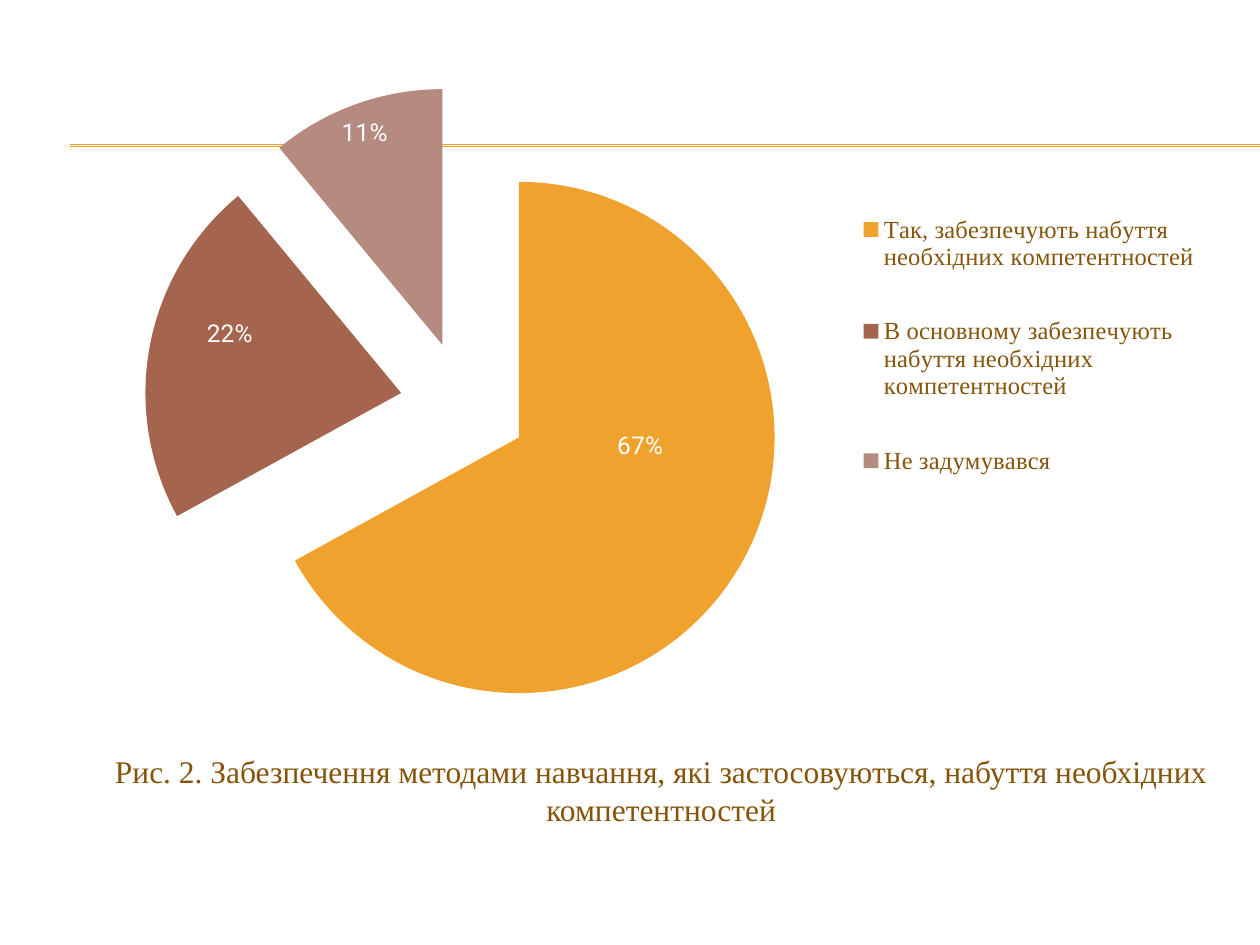
from dataclasses import dataclass

from lxml.etree import SubElement
from pptx import Presentation
from pptx.chart.data import CategoryChartData
from pptx.dml.color import RGBColor
from pptx.enum.chart import XL_CHART_TYPE as ChartType
from pptx.enum.chart import XL_LABEL_POSITION as LabelPosition
from pptx.enum.chart import XL_LEGEND_POSITION as LegendPosition
from pptx.enum.shapes import MSO_CONNECTOR as Connector
from pptx.enum.text import MSO_ANCHOR as Anchor
from pptx.enum.text import PP_ALIGN as Align
from pptx.oxml import parse_xml
from pptx.oxml.ns import nsdecls, qn
from pptx.util import Cm, Pt


@dataclass(frozen=True)
class Theme:
    accent: RGBColor = RGBColor(0xF0, 0xA2, 0x2E)
    rust: RGBColor = RGBColor(0xA5, 0x64, 0x4E)
    rose: RGBColor = RGBColor(0xB5, 0x8B, 0x80)
    text: RGBColor = RGBColor(0x85, 0x54, 0x0A)
    label: RGBColor = RGBColor(0xFF, 0xFF, 0xFF)
    serif: str = "Times New Roman"
    sans: str = "Roboto"
    title_size: Pt = Pt(18)
    chart_size: Pt = Pt(14)
    rule_width: Pt = Pt(0.75)


@dataclass(frozen=True)
class Answer:
    name: str
    share: float
    color: RGBColor
    label_shift: tuple[float, float]


THEME = Theme()
ANSWERS = [
    Answer("Так, забезпечують набуття необхідних компетентностей",
           0.67, THEME.accent, (0.01, -0.08)),
    Answer("В основному забезпечують набуття необхідних компетентностей",
           0.22, THEME.rust, (-0.04, -0.05)),
    Answer("Не задумувався", 0.11, THEME.rose, (-0.03, -0.13)),
]
TITLE = ("Рис. 2. Забезпечення методами навчання, які застосовуються, "
         "набуття необхідних компетентностей")
RULE_TOPS = (2.92, 2.95)
EXPLOSION = 25


def style_font(font, name: str, size: Pt, color: RGBColor) -> None:
    font.name, font.size = name, size
    font.color.rgb = color


def add_rule(slide, top: float) -> None:
    rule = slide.shapes.add_connector(
        Connector.STRAIGHT, Cm(1.42), Cm(top), Cm(25.4), Cm(top))
    rule.line.color.rgb = THEME.accent
    rule.line.width = THEME.rule_width
    SubElement(rule.element.spPr, qn("a:effectLst"))


def place_title(slide) -> None:
    title = slide.shapes.title
    title.left, title.top = Cm(1.9), Cm(14.33)
    title.width, title.height = Cm(22.86), Cm(3.18)
    frame = title.text_frame
    frame.text = TITLE
    frame.vertical_anchor = Anchor.MIDDLE
    para = frame.paragraphs[0]
    para.alignment = Align.CENTER
    style_font(para.font, THEME.serif, THEME.title_size, THEME.text)


def make_layout(**settings):
    """Build a manual chart layout; lengths are fractions of the chart."""
    items = "".join(f'<c:{key} val="{value}"/>' for key, value in settings.items())
    return parse_xml(f'<c:layout {nsdecls("c")}><c:manualLayout>{items}'
                     "</c:manualLayout></c:layout>")


def set_layout(parent, before: str, **settings) -> None:
    """Replace the layout of a chart part, placing it ahead of a given child."""
    for old in parent.findall(qn("c:layout")):
        parent.remove(old)
    parent.find(qn(before)).addprevious(make_layout(**settings))


def style_slices(chart) -> None:
    series = chart.plots[0].series[0]
    series.format.fill.solid()
    series.format.fill.fore_color.rgb = THEME.accent
    for index, answer in enumerate(ANSWERS):
        point = series.points[index]
        point.format.fill.solid()
        point.format.fill.fore_color.rgb = answer.color
        point.format.line.fill.background()
        label = point.data_label
        style_font(label.font, THEME.sans, THEME.chart_size, THEME.label)
        label.position = LabelPosition.CENTER

    series_xml = chart.element.find(".//" + qn("c:ser"))
    explosion = parse_xml(f'<c:explosion {nsdecls("c")} val="{EXPLOSION}"/>')
    series_xml.find(qn("c:spPr")).addnext(explosion)
    for label_xml, answer in zip(series_xml.iter(qn("c:dLbl")), ANSWERS):
        shift_x, shift_y = answer.label_shift
        label_xml.find(qn("c:idx")).addnext(make_layout(x=shift_x, y=shift_y))


def add_pie(slide) -> None:
    data = CategoryChartData(number_format="0%")
    data.categories = [answer.name for answer in ANSWERS]
    data.add_series("Series 1", [answer.share for answer in ANSWERS])
    chart = slide.shapes.add_chart(
        ChartType.PIE, Cm(1.3), Cm(0.71), Cm(23.01), Cm(14.2), data).chart
    chart.has_title = False
    chart.font.name, chart.font.size = THEME.sans, Pt(10)
    chart.plots[0].vary_by_categories = True
    style_slices(chart)

    chart.has_legend = True
    legend = chart.legend
    legend.position = LegendPosition.RIGHT
    legend.include_in_layout = False
    style_font(legend.font, THEME.serif, THEME.chart_size, THEME.text)
    area = chart.element.find(".//" + qn("c:plotArea"))
    set_layout(area, "c:pieChart", layoutTarget="inner", xMode="edge",
               yMode="edge", x=0.07, y=0.07, w=0.56, h=0.91)
    set_layout(chart.element.find(".//" + qn("c:legend")), "c:overlay",
               xMode="edge", yMode="edge", x=0.69, y=0.19, w=0.31, h=0.5)


def main() -> None:
    deck = Presentation()
    deck.slide_width, deck.slide_height = Cm(25.4), Cm(19.05)
    slide = deck.slides.add_slide(deck.slide_layouts[5])
    for top in RULE_TOPS:
        add_rule(slide, top)
    place_title(slide)
    add_pie(slide)
    deck.save("out.pptx")


if __name__ == "__main__":
    main()
